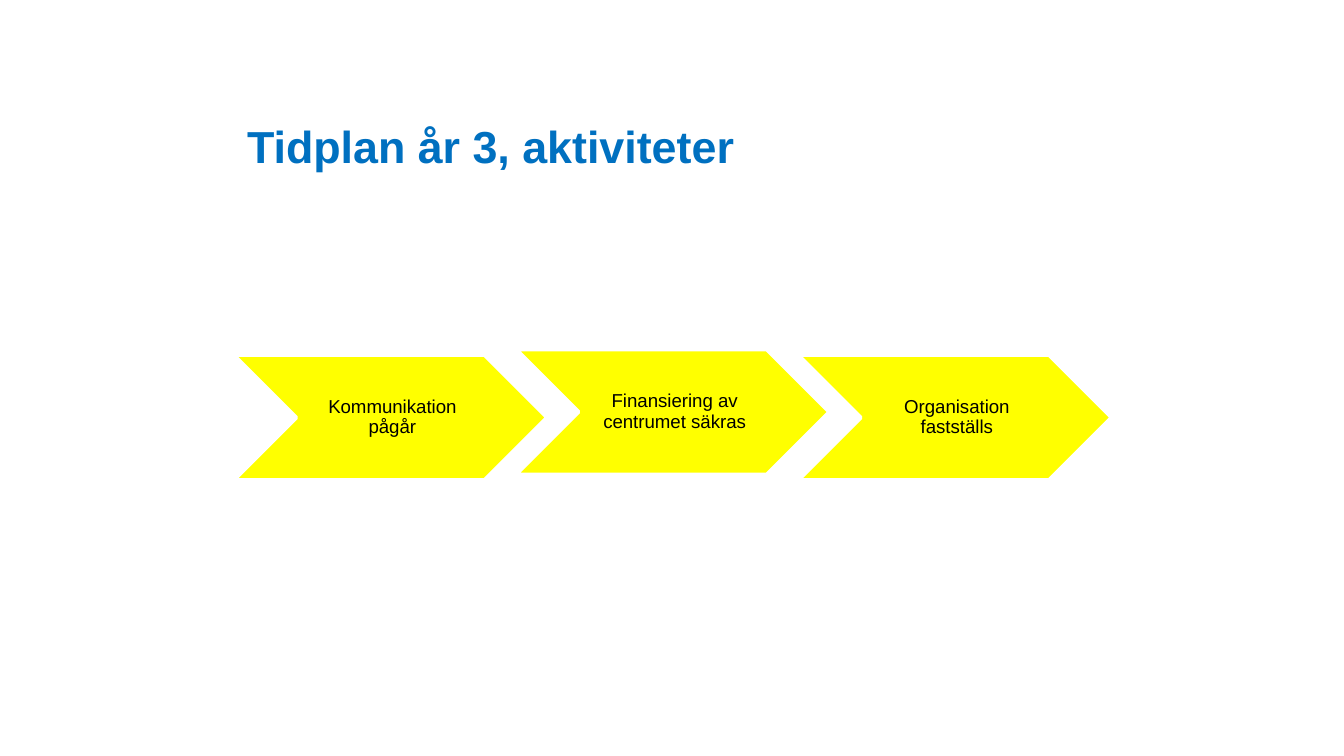
from pptx import Presentation
from pptx.dml.color import RGBColor
from pptx.enum import shapes, text
from pptx.util import Pt

BLUE = RGBColor(0x00, 0x70, 0xC0)
YELLOW = RGBColor(0xFF, 0xFF, 0x00)
WHITE = RGBColor(0xFF, 0xFF, 0xFF)
BLACK = RGBColor(0x00, 0x00, 0x00)
FONT = "Arial"

ACTIVITIES = [
    # label, distance below the top of the row
    ("Kommunikation pågår", 3),
    ("Finansiering av centrumet säkras", 0),
    ("Organisation fastställs", 3),
]
STEP_WIDTH, STEP_HEIGHT = 167.8, 67


def format_font(paragraph, size, color, bold=False):
    font = paragraph.runs[0].font
    font.name, font.size, font.bold = FONT, Pt(size), bold
    font.color.rgb = color


def add_title(slide, title, left, top, width, height):
    shape = slide.shapes.add_textbox(Pt(left), Pt(top), Pt(width), Pt(height))
    frame = shape.text_frame
    frame.word_wrap = True
    frame.vertical_anchor = text.MSO_ANCHOR.BOTTOM
    frame.text = title
    format_font(frame.paragraphs[0], 24, BLUE, bold=True)


def add_step(group, label, left, top):
    shape = group.shapes.add_shape(
        shapes.MSO_SHAPE.CHEVRON, Pt(left), Pt(top), Pt(STEP_WIDTH), Pt(STEP_HEIGHT))
    shape.shadow.inherit = False
    shape.fill.solid()
    shape.fill.fore_color.rgb = YELLOW
    shape.line.color.rgb = WHITE
    shape.line.width = Pt(2)

    frame = shape.text_frame
    frame.word_wrap = True
    frame.vertical_anchor = text.MSO_ANCHOR.MIDDLE
    frame.margin_left = Pt(3)
    frame.margin_top = frame.margin_right = frame.margin_bottom = Pt(1)
    frame.text = label
    paragraph = frame.paragraphs[0]
    paragraph.alignment = text.PP_ALIGN.CENTER
    paragraph.line_spacing = 0.9
    format_font(paragraph, 10, BLACK)


def add_timeline(slide, activities, left, top, width):
    group = slide.shapes.add_group_shape()
    pitch = (width - STEP_WIDTH) / (len(activities) - 1)
    for index, (label, drop) in enumerate(activities):
        add_step(group, label, left + index * pitch, top + drop)


def main():
    presentation = Presentation()
    presentation.slide_width, presentation.slide_height = Pt(720), Pt(405)
    slide = presentation.slides.add_slide(presentation.slide_layouts[6])

    # Heading
    add_title(slide, "Tidplan år 3, aktiviteter", 125.3, 30.2, 470.9, 65.5)
    # Row of activities
    add_timeline(slide, ACTIVITIES, 125.3, 187.2, 470.2)

    presentation.save("out.pptx")


if __name__ == "__main__":
    main()
